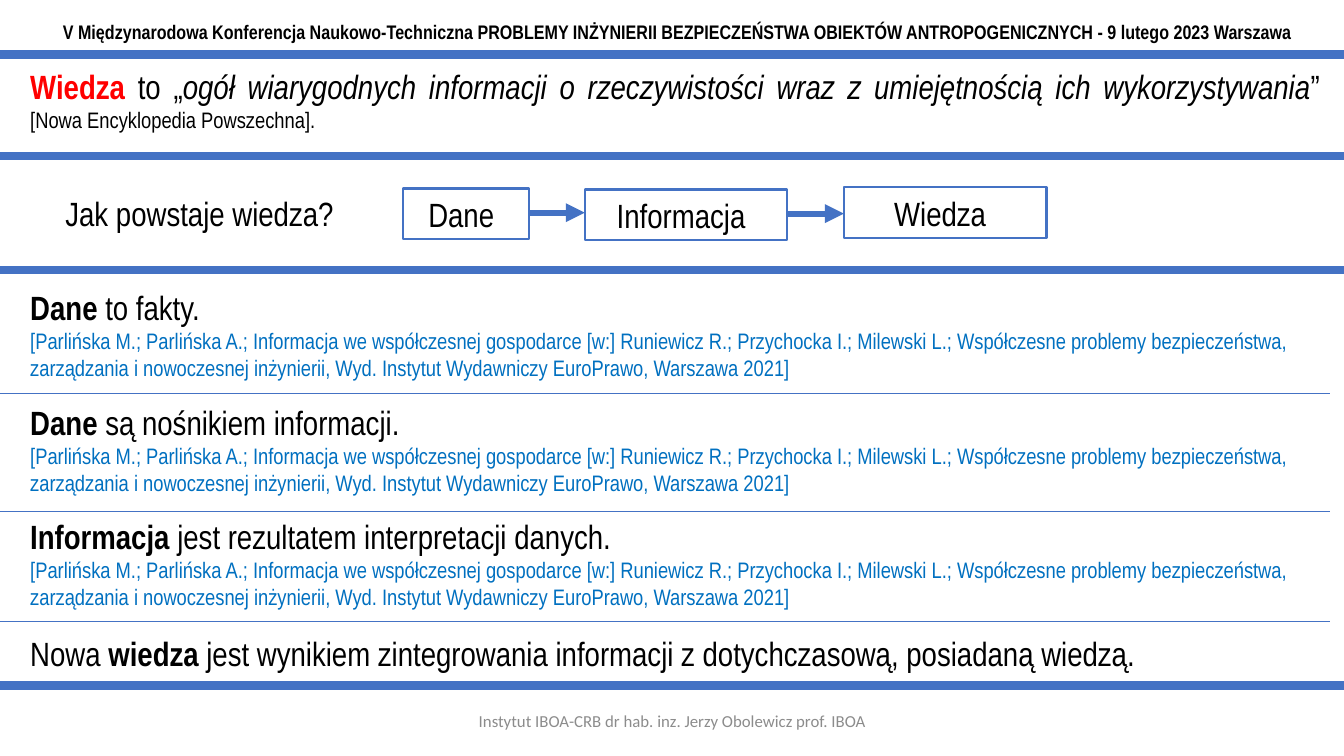
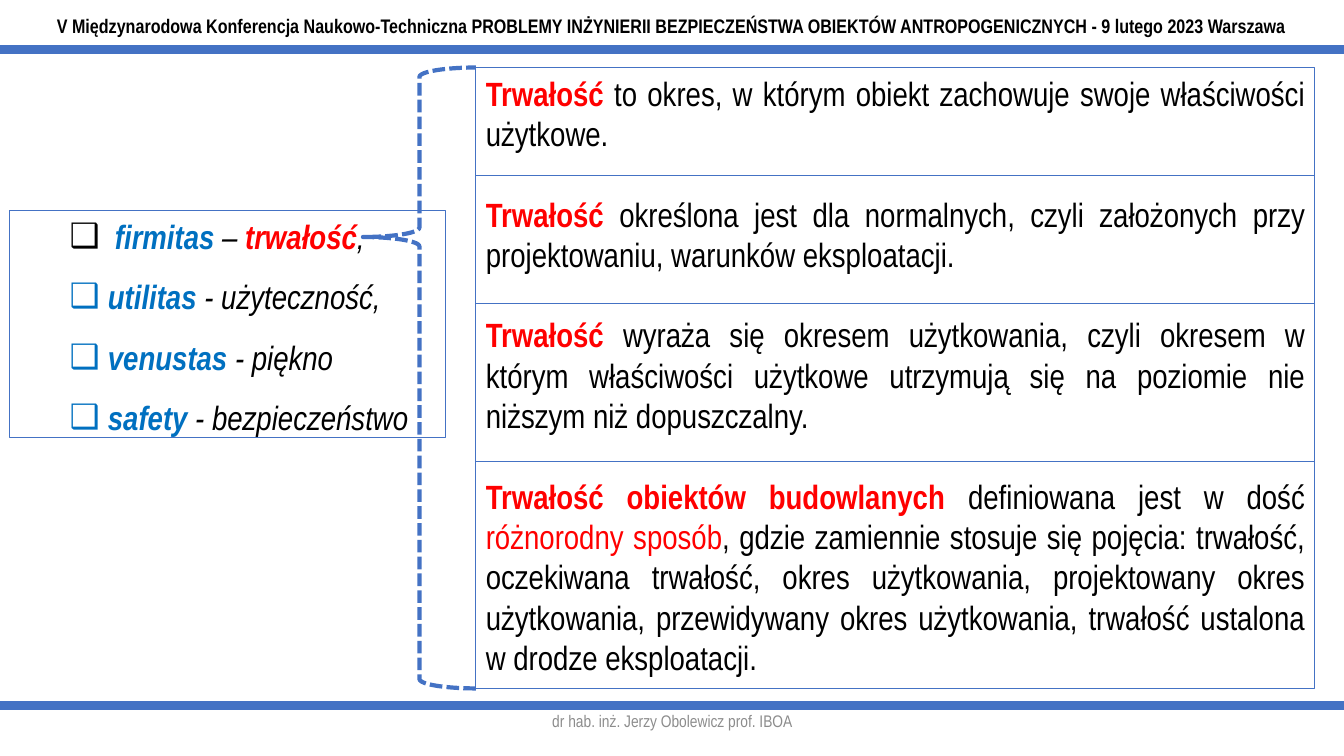
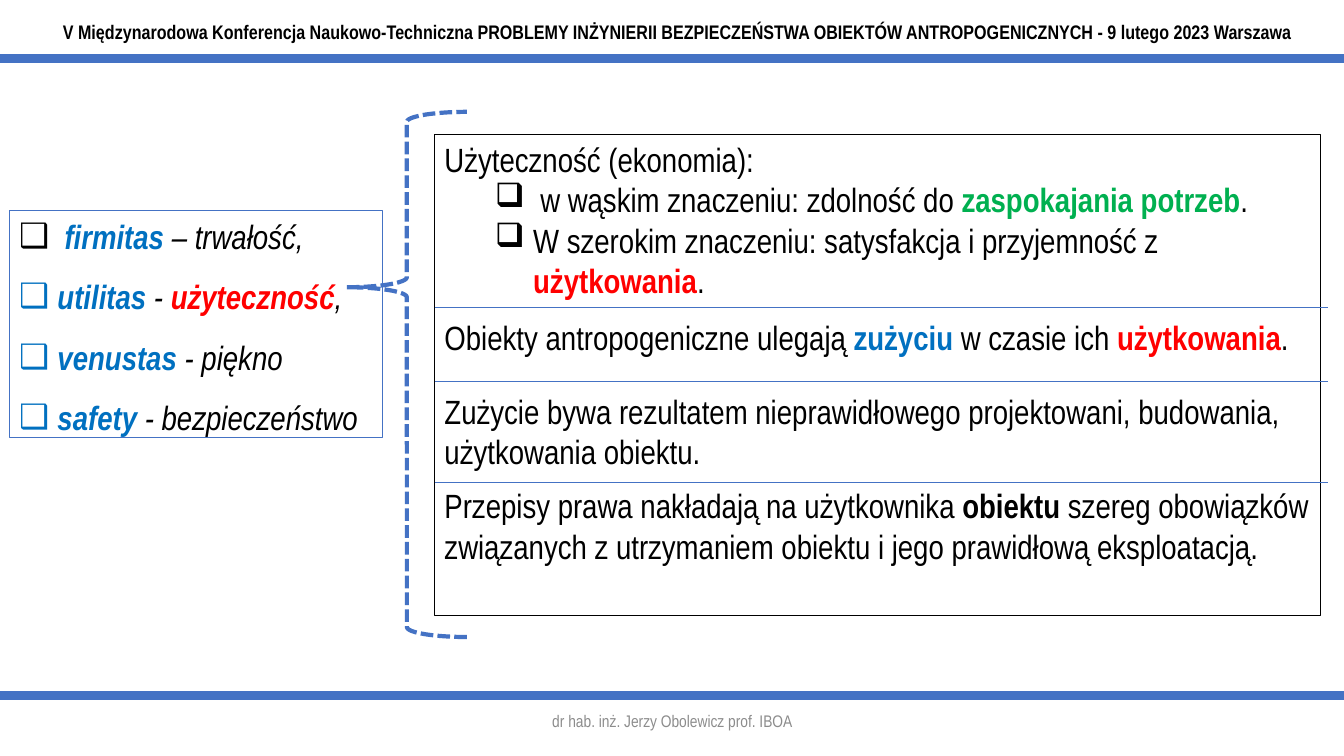
from lxml.etree import SubElement
from pptx import Presentation
from pptx.dml.color import RGBColor
from pptx.enum.dml import MSO_LINE
from pptx.enum.shapes import MSO_CONNECTOR, MSO_SHAPE
from pptx.enum.text import MSO_ANCHOR, MSO_AUTO_SIZE, PP_ALIGN
from pptx.oxml.ns import qn
from pptx.util import Inches, Pt

WIDTH, HEIGHT = 13.33, 7.5
NARROW = "Arial Narrow"
BLACK, WHITE, GRAY = "000000", "FFFFFF", "8C8C8C"
ACCENT, BLUE, RED, GREEN = "4472C4", "0070C0", "FF0000", "00B050"
LEFT, CENTER, JUSTIFY = PP_ALIGN.LEFT, PP_ALIGN.CENTER, PP_ALIGN.JUSTIFY

HEADER = ("V Międzynarodowa Konferencja Naukowo-Techniczna PROBLEMY INŻYNIERII "
          "BEZPIECZEŃSTWA OBIEKTÓW ANTROPOGENICZNYCH - 9 lutego 2023 Warszawa")
AUTHOR = "dr hab. inż. Jerzy Obolewicz prof. IBOA"
SOURCE = ("[Parlińska M.; Parlińska A.; Informacja we współczesnej gospodarce [w:] Runiewicz R.; "
          "Przychocka I.; Milewski L.; Współczesne problemy bezpieczeństwa, zarządzania i "
          "nowoczesnej inżynierii, Wyd. Instytut Wydawniczy EuroPrawo, Warszawa 2021]")


def span(text, color=BLACK, **style):
    return dict(text=text, color=color, **style)


def strong(text, color=BLACK, **style):
    return span(text, color, bold=True, **style)


def item(*spans, **style):
    """One paragraph: its spans and its format."""
    return dict(spans=spans, **style)


CITATION = item(span(SOURCE, BLUE, size=16))
KNOWLEDGE = [
    item(strong("Wiedza", RED), span(" to „"),
         span("ogół wiarygodnych informacji o rzeczywistości wraz z umiejętnością "
              "ich wykorzystywania", italic=True),
         span("”"), span("\n"), span("[Nowa Encyklopedia Powszechna].", size=16), align=JUSTIFY),
    item(strong("Dane"), span(" to fakty."), before=110.4),
    CITATION,
    item(strong("Dane"), span(" są nośnikiem informacji."), before=14.4),
    CITATION,
    item(strong("Informacja "), span("jest rezultatem interpretacji danych."), before=14.4),
    CITATION,
    item(span("Nowa "), strong("wiedza"),
         span(" jest wynikiem zintegrowania informacji z dotychczasową, posiadaną wiedzą."),
         before=16.8),
]
# label, left, top, width
STAGES = [("Dane", 4, 1.87, 1.25), ("Informacja", 5.8, 1.88, 2.01), ("Wiedza", 8.37, 1.86, 2.01)]

VIRTUES = [("firmitas", " – ", "trwałość", ","), ("utilitas", " - ", "użyteczność", ","),
           ("venustas", " - ", "piękno", ""), ("safety", " - ", "bezpieczeństwo", "")]

DURABILITY = [
    [strong("Trwałość ", RED),
     span("to okres, w którym obiekt zachowuje swoje właściwości użytkowe.")],
    [strong("Trwałość", RED),
     span(" określona jest dla normalnych, czyli założonych przy projektowaniu, "
          "warunków eksploatacji.")],
    [strong("Trwałość", RED),
     span(" wyraża się okresem użytkowania, czyli okresem w którym właściwości użytkowe "
          "utrzymują się na poziomie nie niższym niż dopuszczalny.")],
    [strong("Trwałość obiektów budowlanych ", RED), span("definiowana jest w dość "),
     span("różnorodny sposób", RED),
     span(", gdzie zamiennie stosuje się pojęcia: trwałość, oczekiwana trwałość, okres "
          "użytkowania, projektowany okres użytkowania, przewidywany okres użytkowania, "
          "trwałość ustalona w drodze eksploatacji.")],
]
UTILITY = [
    item(span("Użyteczność (ekonomia):")),
    item(span("w wąskim znaczeniu: zdolność do "), strong("zaspokajania potrzeb", GREEN),
         span("."), bullet=(0.95, 0.45, BLACK)),
    item(span("W szerokim znaczeniu: satysfakcja i przyjemność z "),
         strong("użytkowania", RED), span("."), bullet=(0.88, 0.38, BLACK)),
    item(span("Obiekty antropogeniczne ulegają "), strong("zużyciu", BLUE),
         span(" w czasie ich "), strong("użytkowania", RED), span("."), before=12),
    item(span("Zużycie bywa rezultatem nieprawidłowego projektowani, budowania, "
              "użytkowania obiektu."), before=24),
    item(span("Przepisy prawa nakładają na użytkownika"), strong(" obiektu "),
         span("szereg obowiązków związanych z utrzymaniem obiektu i jego prawidłową "
              "eksploatacją."), before=9.6),
]


def rgb(color):
    return RGBColor.from_string(color)


def set_bullet(para, bullet):
    """Give the paragraph a box bullet (left, hang, colour), or none."""
    left, hang, color = bullet or (0, 0, None)
    properties = para._p.get_or_add_pPr()
    properties.set("marL", str(Inches(left)))
    properties.set("indent", str(-Inches(hang)))
    if bullet:
        SubElement(SubElement(properties, qn("a:buClr")), qn("a:srgbClr")).set("val", color)
        SubElement(properties, qn("a:buChar")).set("char", "❑")
    else:
        SubElement(properties, qn("a:buNone"))


def write(shape, items, size=24, font=NARROW, anchor=MSO_ANCHOR.TOP):
    frame = shape.text_frame
    frame.word_wrap = True
    frame.auto_size = MSO_AUTO_SIZE.NONE
    frame.vertical_anchor = anchor
    for index, entry in enumerate(items):
        para = frame.add_paragraph() if index else frame.paragraphs[0]
        set_bullet(para, entry.get("bullet"))
        para.alignment = entry.get("align", LEFT)
        para.line_spacing = entry.get("line", 1.0)
        para.space_before = Pt(entry.get("before", 0))
        para.space_after = Pt(0)
        for part in entry["spans"]:
            if part["text"] == "\n":
                para.add_line_break()
                continue
            run = para.add_run()
            run.text = part["text"]
            run.font.name = font
            run.font.size = Pt(part.get("size", size))
            run.font.bold = part.get("bold", False)
            run.font.italic = part.get("italic", False)
            run.font.color.rgb = rgb(part["color"])


def place(shape, left, top, width, height):
    shape.left, shape.top = Inches(left), Inches(top)
    shape.width, shape.height = Inches(width), Inches(height)


def add_text(page, box, items, **style):
    write(page.shapes.add_textbox(*map(Inches, box)), items, **style)


def add_outline(page, box, color=ACCENT, weight=0.75, preset=MSO_SHAPE.RECTANGLE):
    shape = page.shapes.add_shape(preset, *map(Inches, box))
    shape.shadow.inherit = False
    shape.fill.background()
    shape.line.color.rgb = rgb(color)
    shape.line.width = Pt(weight)
    return shape


def add_brace(page, box, curl, tip):
    brace = add_outline(page, box, weight=3, preset=MSO_SHAPE.LEFT_BRACE)
    brace.line.dash_style = MSO_LINE.SQUARE_DOT
    brace.adjustments[0], brace.adjustments[1] = curl, tip


def add_rule(page, left, right, top, weight=0.5, arrow=False):
    rule = page.shapes.add_connector(MSO_CONNECTOR.STRAIGHT, Inches(left), Inches(top),
                                     Inches(right), Inches(top))
    rule.line.color.rgb = rgb(ACCENT)
    rule.line.width = Pt(weight)
    if arrow:
        SubElement(rule.line._get_or_add_ln(), qn("a:tailEnd")).set("type", "triangle")
    SubElement(rule._element.spPr, qn("a:effectLst"))


def add_page(deck, bands, header=(0.35, 0.15), footer=AUTHOR, footer_font=NARROW):
    """Add a slide with its header, full-width bands and footer."""
    page = deck.slides.add_slide(deck.slide_layouts[1])
    place(page.shapes.title, *header, 12.75, 0.34)
    write(page.shapes.title, [item(strong(HEADER), align=CENTER)], size=14)
    add_text(page, (4.42, 6.95, 4.5, 0.4), [item(span(footer, GRAY), align=CENTER)],
             size=12, font=footer_font, anchor=MSO_ANCHOR.MIDDLE)
    for top in bands:
        add_rule(page, 0, WIDTH, top, weight=6)
    return page


def fill_virtues(page, width, indent, chosen):
    """List the virtues in the body, with the chosen one in red."""
    body = page.placeholders[1]
    place(body, 0.09, 2.09, width, 2.25)
    body.fill.solid()
    body.fill.fore_color.rgb = rgb(WHITE)
    body.line.color.rgb = rgb(ACCENT)
    body.line.width = Pt(0.75)
    items = []
    for index, (latin, dash, meaning, comma) in enumerate(VIRTUES):
        first = index == 0
        extra = 0.07 if first else 0
        picked = meaning == chosen
        items.append(item(
            strong(latin, BLUE, italic=True), span(dash, italic=True),
            span(meaning, RED if picked else BLACK, bold=picked, italic=True),
            span(comma, italic=True),
            line=1.0 if first else 1.5,
            bullet=(indent + extra, 0.38 + extra, BLACK if first else BLUE)))
    write(body, items)


def knowledge_page(deck):
    page = add_page(deck, [0.54, 1.55, 2.68, 6.8], footer_font="Calibri",
                    footer="Instytut IBOA-CRB dr hab. inz. Jerzy Obolewicz prof. IBOA")
    body = page.placeholders[1]
    place(body, 0.2, 0.6, 12.99, 6.4)
    write(body, KNOWLEDGE)
    add_text(page, (0.55, 1.86, 2.91, 0.5), [item(span("Jak powstaje wiedza?"))])
    for label, left, top, width in STAGES:
        stage = add_outline(page, (left, top, width, 0.5), weight=1.5)
        write(stage, [item(span(label), align=CENTER)])
        stage.text_frame.margin_right = Inches(0.2)
    for (_, left, top, width), following in zip(STAGES, STAGES[1:]):
        add_rule(page, left + width, following[1], top + 0.24, weight=4.5, arrow=True)
    for top in (3.9, 5.07, 6.16):
        add_rule(page, 0, 13.19, top)


def durability_page(deck):
    page = add_page(deck, [0.49, 7], header=(0.29, 0.09))
    fill_virtues(page, 4.33, 0.88, "trwałość")
    left, top, width, height = 4.72, 0.67, 8.32, 6.16
    write(add_outline(page, (left, top, width, height)),
          [item(*spans, align=JUSTIFY, before=28.8 if index else 0)
           for index, spans in enumerate(DURABILITY)])
    add_brace(page, (3.6, top, 1.12, height), 0.083, 0.273)
    for line_top in (1.74, 3.01, 4.58):
        add_rule(page, left, left + width, line_top)


def utility_page(deck):
    page = add_page(deck, [0.58, 6.9])
    fill_virtues(page, 3.7, 0.38, "użyteczność")
    add_brace(page, (3.44, 1.11, 1.19, 5.21), 0.083, 0.334)
    write(add_outline(page, (4.31, 1.33, 8.79, 4.78), color=BLACK), UTILITY)
    for top in (3.05, 3.78, 4.79):
        add_rule(page, 4.31, 13.17, top)


def main():
    deck = Presentation()
    deck.slide_width, deck.slide_height = Inches(WIDTH), Inches(HEIGHT)
    knowledge_page(deck)
    durability_page(deck)
    utility_page(deck)
    deck.save("out.pptx")


if __name__ == "__main__":
    main()
